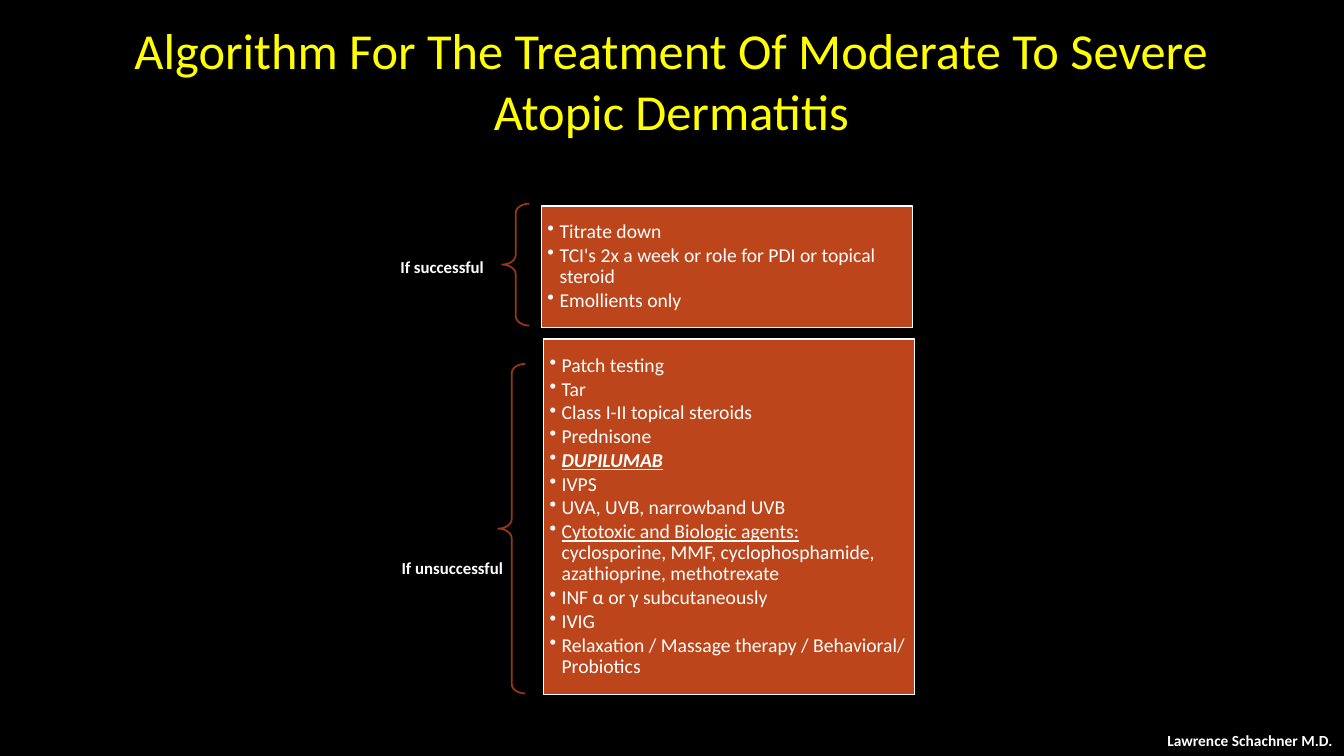
from dataclasses import dataclass

from lxml import etree
from pptx import Presentation
from pptx import util as u
from pptx.dml.color import RGBColor
from pptx.enum import shapes, text
from pptx.oxml import ns

FONT = "Calibri"
WHITE, YELLOW, BLACK = "FFFFFF", "FFFF00", "000000"
RUST, DARK_RUST = "BC451B", "973716"
BOX_WIDTH = 3.68
BRACE_WIDTH = 0.27
BULLET_INDENT = 0.12


@dataclass(frozen=True)
class Span:
    wording: str
    size: float = 14
    color: str = WHITE
    bold: bool = False
    italic: bool = False
    underline: bool = False


@dataclass(frozen=True)
class Area:
    left: float
    top: float
    width: float
    height: float

    def lengths(self) -> list[u.Length]:
        return [u.Inches(v) for v in (self.left, self.top, self.width, self.height)]


@dataclass(frozen=True)
class Outcome:
    label: str
    label_area: Area
    brace_area: Area
    box_area: Area
    treatments: list[list[Span]]


OUTCOMES = [
    Outcome(
        "If successful",
        Area(3.81, 2.58, 1.08, 0.16),
        Area(4.98, 2.02, BRACE_WIDTH, 1.21),
        Area(5.37, 2.04, BOX_WIDTH, 1.21),
        [
            [Span("Titrate down")],
            [Span("TCI's 2x a week or role for PDI or topical steroid")],
            [Span("Emollients only")],
        ],
    ),
    Outcome(
        "If unsuccessful",
        Area(3.73, 5.47, 1.35, 0.35),
        Area(4.94, 3.61, BRACE_WIDTH, 3.27),
        Area(5.39, 3.36, BOX_WIDTH, 3.53),
        [
            [Span("Patch testing")],
            [Span("Tar")],
            [Span("Class I-II topical steroids")],
            [Span("Prednisone")],
            [Span("DUPILUMAB", bold=True, italic=True, underline=True)],
            [Span("IVPS")],
            [Span("UVA, UVB, narrowband UVB")],
            [
                Span("Cytotoxic and Biologic agents:", underline=True),
                Span(" cyclosporine, MMF, cyclophosphamide, azathioprine, methotrexate"),
            ],
            [Span("INF α or γ subcutaneously")],
            [Span("IVIG")],
            [Span("Relaxation / Massage therapy / Behavioral/ Probiotics")],
        ],
    ),
]


def rgb(color: str) -> RGBColor:
    return RGBColor.from_string(color)


def add_span(paragraph, span: Span) -> None:
    run = paragraph.add_run()
    run.text = span.wording
    font = run.font
    font.name, font.size = FONT, u.Pt(span.size)
    font.bold, font.italic, font.underline = span.bold, span.italic, span.underline
    font.color.rgb = rgb(span.color)


def set_frame(frame, side: float, end: float) -> None:
    frame.word_wrap = True
    frame.vertical_anchor = text.MSO_ANCHOR.MIDDLE
    frame.margin_left = frame.margin_right = u.Inches(side)
    frame.margin_top = frame.margin_bottom = u.Inches(end)


def add_bullet(paragraph) -> None:
    properties = paragraph._p.get_or_add_pPr()
    properties.set("marL", str(u.Inches(BULLET_INDENT)))
    properties.set("indent", str(-u.Inches(BULLET_INDENT)))
    etree.SubElement(properties, ns.qn("a:buChar")).set("char", "•")


def add_outlined(slide, kind, area: Area, line: str):
    shape = slide.shapes.add_shape(kind, *area.lengths())
    shape.shadow.inherit = False
    shape.line.color.rgb = rgb(line)
    shape.line.width = u.Pt(1.25)
    return shape


def add_outcome(slide, outcome: Outcome) -> None:
    # Label
    label = slide.shapes.add_textbox(*outcome.label_area.lengths()).text_frame
    set_frame(label, 0.09, 0.03)
    label.paragraphs[0].alignment = text.PP_ALIGN.RIGHT
    label.paragraphs[0].line_spacing = 0.9
    add_span(label.paragraphs[0], Span(outcome.label, size=12, bold=True))

    # Brace
    brace = add_outlined(slide, shapes.MSO_SHAPE.LEFT_BRACE, outcome.brace_area, DARK_RUST)
    brace.fill.background()
    brace.adjustments[0] = 0.35

    # Treatment list
    box = add_outlined(slide, shapes.MSO_SHAPE.RECTANGLE, outcome.box_area, WHITE)
    box.fill.solid()
    box.fill.fore_color.rgb = rgb(RUST)
    frame = box.text_frame
    set_frame(frame, 0.06, 0.06)
    for index, treatment in enumerate(outcome.treatments):
        paragraph = frame.add_paragraph() if index else frame.paragraphs[0]
        add_bullet(paragraph)
        paragraph.alignment = text.PP_ALIGN.LEFT
        paragraph.line_spacing = 0.9
        paragraph.space_after = u.Pt(1.8)
        for span in treatment:
            add_span(paragraph, span)


def main() -> None:
    deck = Presentation()
    deck.slide_width, deck.slide_height = u.Inches(13.33), u.Inches(7.5)
    slide = deck.slides.add_slide(deck.slide_layouts[5])
    slide.background.fill.solid()
    slide.background.fill.fore_color.rgb = rgb(BLACK)

    # Title
    title = slide.shapes.title
    title.left, title.top, title.width, title.height = Area(1, 0.26, 11.32, 1.06).lengths()
    set_frame(title.text_frame, 0.1, 0.05)
    title.text_frame.auto_size = text.MSO_AUTO_SIZE.NONE
    heading = title.text_frame.paragraphs[0]
    heading.alignment = text.PP_ALIGN.CENTER
    add_span(heading, Span("Algorithm For The Treatment Of Moderate To Severe Atopic Dermatitis",
                           size=36, color=YELLOW))

    # Outcomes
    for outcome in OUTCOMES:
        add_outcome(slide, outcome)

    # Author
    author = slide.shapes.add_textbox(*Area(11.48, 7.2, 1.86, 0.29).lengths()).text_frame
    author.word_wrap = False
    author.auto_size = text.MSO_AUTO_SIZE.SHAPE_TO_FIT_TEXT
    add_span(author.paragraphs[0], Span("Lawrence Schachner M.D.", size=11, bold=True))

    deck.save("out.pptx")


if __name__ == "__main__":
    main()
